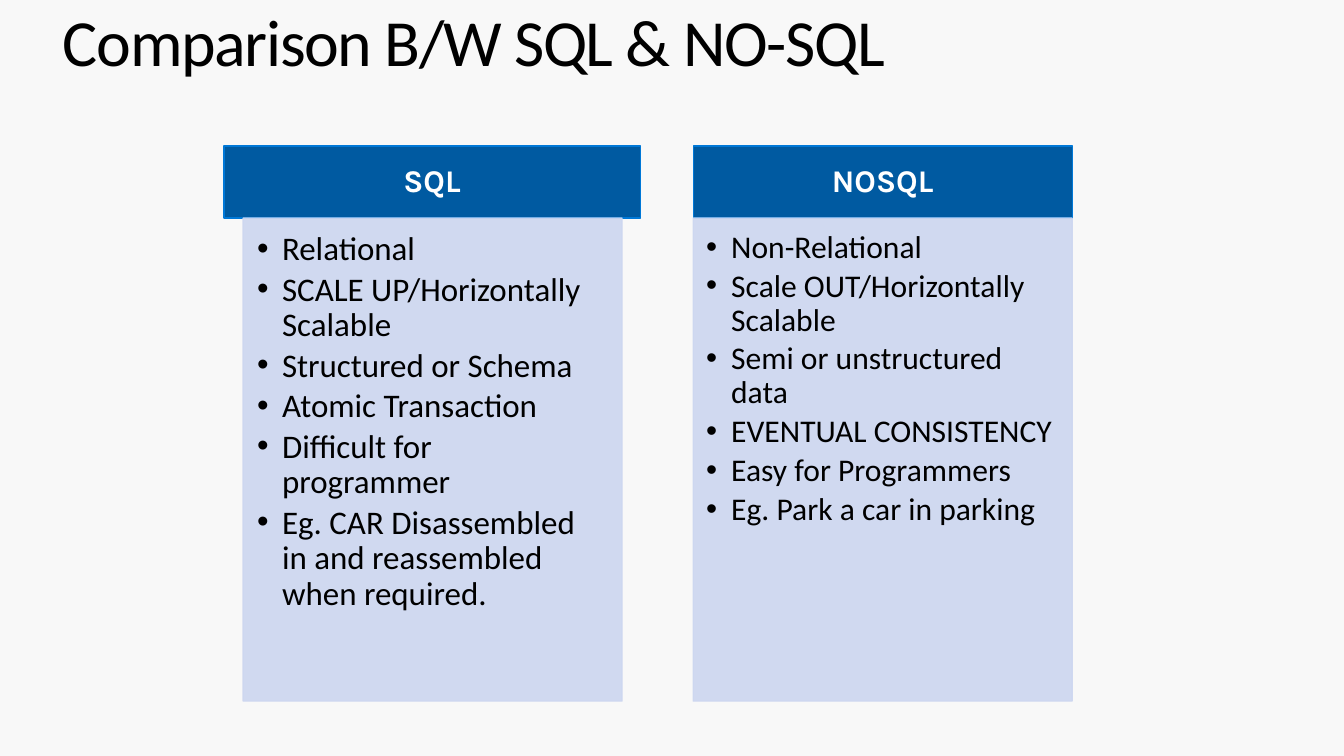
from lxml import etree
from pptx import Presentation
from pptx import util as u
from pptx.dml.color import RGBColor
from pptx.enum import shapes, text
from pptx.oxml.ns import qn

PX = 9255  # EMU per px
BLUE, EDGE, PALE, BLACK, WHITE = "005AA1", "0078D7", "CCD6F0", "000000", "FFFFFF"
COLUMN_WIDTH = 379

COLUMNS = [
    # heading, heading left, heading width, list left, text size, insets, items
    ("SQL", 224, 416, 243, 24, (14, 14, 19, 21), [
        "Relational",
        "SCALE UP/Horizontally Scalable",
        "Structured or Schema",
        "Atomic Transaction",
        "Difficult for programmer",
        "Eg. CAR Disassembled in and reassembled when required.",
    ]),
    ("NOSQL", 693, COLUMN_WIDTH, 693, 23, (13, 13, 13, 20), [
        "Non-Relational",
        "Scale OUT/Horizontally Scalable",
        "Semi or unstructured data",
        "EVENTUAL CONSISTENCY",
        "Easy for Programmers",
        "Eg. Park a car in parking",
    ]),
]


def px(length):
    return u.Emu(length * PX)


def rgb(value):
    return RGBColor.from_string(value)


class ComparisonSlide:
    heading_font = "Karla"
    body_font = "Calibri"

    def __init__(self, prs):
        self.slide = prs.slides.add_slide(prs.slide_layouts[5])
        background = self.slide.background.fill
        background.solid()
        background.fore_color.rgb = rgb("F8F8F8")

    def frame(self, shape, insets, anchor):
        frame = shape.text_frame
        frame.word_wrap = True
        frame.auto_size = text.MSO_AUTO_SIZE.NONE
        frame.vertical_anchor = anchor
        (frame.margin_left, frame.margin_top,
         frame.margin_right, frame.margin_bottom) = map(px, insets)
        return frame

    def style(self, paragraph, font, size, color, align, bold=False):
        paragraph.alignment = align
        paragraph.line_spacing = 0.9
        paragraph.font.name = font
        paragraph.font.size = u.Pt(size)
        paragraph.font.bold = bold
        paragraph.font.color.rgb = rgb(color)

    def title(self, words):
        title = self.slide.shapes.title
        title.left, title.top, title.width, title.height = map(px, (47, 0, 1159, 146))
        frame = self.frame(title, (16, 10, 16, 10), text.MSO_ANCHOR.TOP)
        frame.text = words
        paragraph = frame.paragraphs[0]
        self.style(paragraph, self.body_font, 48, BLACK, text.PP_ALIGN.LEFT)
        paragraph.runs[0].font._element.set("spc", "-100")

    def box(self, left, top, width, height, fill, line, alpha=100):
        box = self.slide.shapes.add_shape(
            shapes.MSO_SHAPE.RECTANGLE, *map(px, (left, top, width, height)))
        box.shadow.inherit = False
        box.fill.solid()
        box.fill.fore_color.rgb = rgb(fill)
        box.line.color.rgb = rgb(line)
        box.line.width = u.Pt(0.85)
        if alpha < 100:
            for color in box._element.spPr.iter(qn("a:srgbClr")):
                etree.SubElement(color, qn("a:alpha"), val=str(alpha * 1000))
        return box

    def heading(self, words, left, width):
        box = self.box(left, 146, width, 72, BLUE, EDGE)
        frame = self.frame(box, (18, 10, 18, 10), text.MSO_ANCHOR.MIDDLE)
        frame.text = words
        self.style(frame.paragraphs[0], self.heading_font, 23, WHITE,
                   text.PP_ALIGN.CENTER, bold=True)

    def bullets(self, items, left, size, insets):
        box = self.box(left, 218, COLUMN_WIDTH, 483, PALE, PALE, alpha=90)
        frame = self.frame(box, insets, text.MSO_ANCHOR.TOP)
        frame.text = "\n".join(items)
        for paragraph in frame.paragraphs:
            properties = paragraph._p.get_or_add_pPr()
            properties.set("marL", str(px(25)))
            properties.set("indent", str(px(-25)))
            etree.SubElement(properties, qn("a:buFont"), typeface="Arial")
            etree.SubElement(properties, qn("a:buChar"), char="•")
            self.style(paragraph, self.body_font, size, BLACK, text.PP_ALIGN.LEFT)
            paragraph.space_after = u.Pt(round(size * 0.15, 1))


def main():
    prs = Presentation()
    prs.slide_width, prs.slide_height = u.Inches(13.6), u.Inches(7.65)
    comparison = ComparisonSlide(prs)
    for heading, heading_left, heading_width, left, size, insets, items in COLUMNS:
        comparison.heading(heading, heading_left, heading_width)
        comparison.bullets(items, left, size, insets)
    comparison.title("Comparison B/W SQL & NO-SQL")
    prs.save("out.pptx")


if __name__ == "__main__":
    main()
